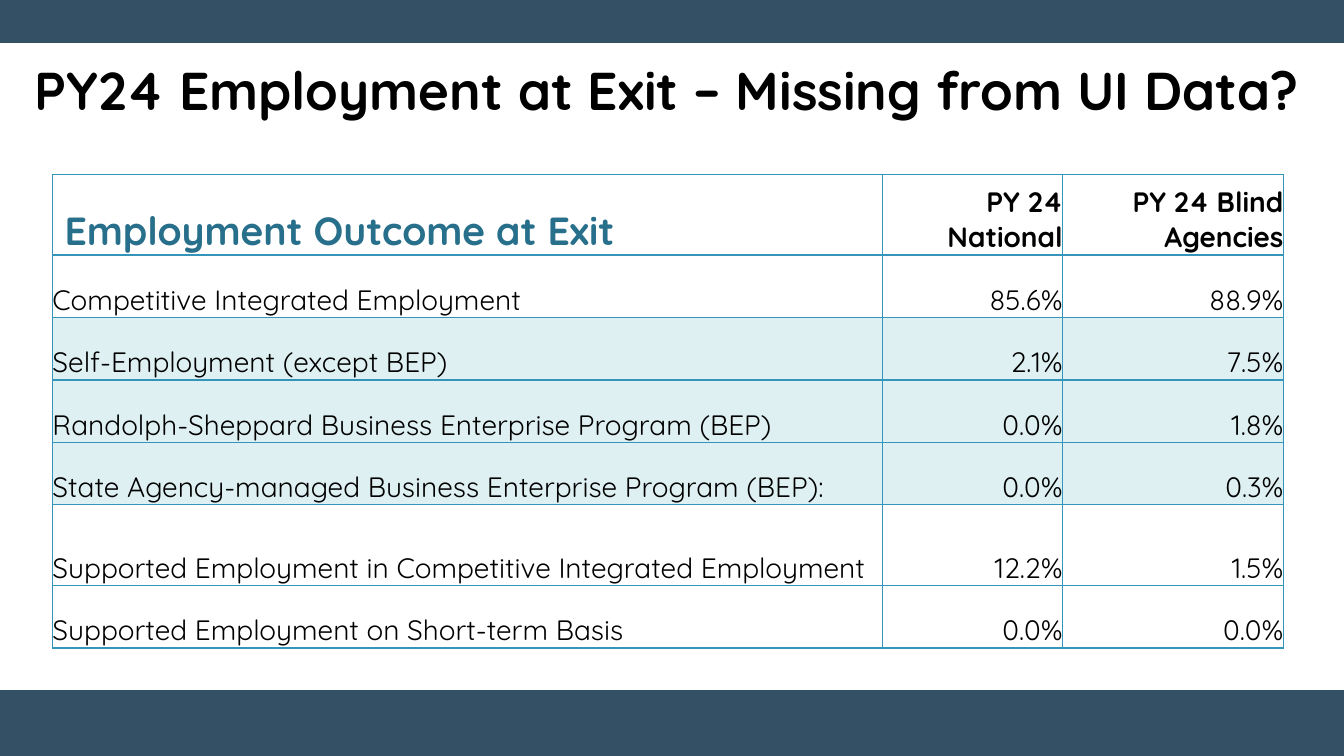
from pptx import Presentation
from pptx.dml.color import RGBColor
from pptx.enum.shapes import MSO_SHAPE as SHAPE
from pptx.enum.text import MSO_ANCHOR as ANCHOR, MSO_AUTO_SIZE as AUTO, PP_ALIGN as ALIGN
from pptx.oxml import parse_xml
from pptx.oxml.ns import nsdecls
from pptx.util import Inches, Pt

NAVY = RGBColor(0x34, 0x50, 0x65)
TEAL = RGBColor(0x27, 0x6F, 0x8B)
BORDER = RGBColor(0x34, 0x94, 0xBA)
PALE = RGBColor(0xDE, 0xF0, 0xF2)
BLACK = RGBColor(0, 0, 0)
WHITE = RGBColor(255, 255, 255)
FONT = "Quicksand"

COL_WIDTHS = [8.23, 1.79, 2.19]
ROW_HEIGHTS = [0.8, 0.62, 0.62, 0.62, 0.62, 0.8, 0.62]
SHADED_ROWS = (2, 3, 4)
ROWS = [
    ("Employment Outcome at Exit", "PY 24 National", "PY 24 Blind Agencies"),
    ("Competitive Integrated Employment", "85.6%", "88.9%"),
    ("Self-Employment (except BEP)", "2.1%", "7.5%"),
    ("Randolph-Sheppard Business Enterprise Program (BEP)", "0.0%", "1.8%"),
    ("State Agency-managed Business Enterprise Program (BEP):", "0.0%", "0.3%"),
    ("Supported Employment in Competitive Integrated Employment", "12.2%", "1.5%"),
    ("Supported Employment on Short-term Basis", "0.0%", "0.0%"),
]


def style_font(p, size, color, bold):
    for r in p.runs:
        r.font.name = FONT
        r.font.size = Pt(size)
        r.font.bold = bold
        r.font.color.rgb = color


def add_bar(s, top, height):
    sp = s.shapes.add_shape(SHAPE.RECTANGLE, 0, Inches(top), Inches(13.33), Inches(height))
    sp.shadow.inherit = False
    sp.fill.solid()
    sp.fill.fore_color.rgb = NAVY
    sp.line.color.rgb = NAVY
    sp.line.width = Pt(1)


def set_title(s, text):
    sp = s.shapes.title
    sp.left, sp.top = Inches(0.24), Inches(0.45)
    sp.width, sp.height = Inches(12.94), Inches(0.96)
    tf = sp.text_frame
    tf.text = text
    tf.word_wrap = True
    tf.auto_size = AUTO.NONE
    tf.vertical_anchor = ANCHOR.MIDDLE
    p = tf.paragraphs[0]
    p.alignment = ALIGN.LEFT
    p.line_spacing = 0.9
    style_font(p, 38, BLACK, True)


def set_borders(cell, top, bottom):
    tc_pr = cell._tc.get_or_add_tcPr()
    for side, width in (("L", 1), ("R", 1), ("T", top), ("B", bottom)):
        tc_pr.append(parse_xml(
            f'<a:ln{side} {nsdecls("a")} w="{Pt(width)}"><a:solidFill>'
            f'<a:srgbClr val="{BORDER}"/></a:solidFill></a:ln{side}>'))


def fill_cell(cell, text, row, col):
    header = row == 0
    heading = header and col == 0
    cell.text = text
    cell.vertical_anchor = ANCHOR.BOTTOM
    cell.margin_left = Inches(0.12 if heading else 0)
    cell.margin_right = cell.margin_top = cell.margin_bottom = 0
    p = cell.text_frame.paragraphs[0]
    p.alignment = ALIGN.RIGHT if col else ALIGN.LEFT
    style_font(p, 28 if heading else 20, TEAL if heading else BLACK, header)
    set_borders(cell, 2 if row == 1 else 1, 2 if header else 1)
    cell.fill.solid()
    cell.fill.fore_color.rgb = PALE if row in SHADED_ROWS else WHITE


def add_outcome_table(s):
    table = s.shapes.add_table(
        len(ROWS), len(COL_WIDTHS), Inches(0.52), Inches(1.73),
        Inches(sum(COL_WIDTHS)), Inches(sum(ROW_HEIGHTS))).table
    table.horz_banding = False
    for column, width in zip(table.columns, COL_WIDTHS):
        column.width = Inches(width)
    for row, (texts, height) in enumerate(zip(ROWS, ROW_HEIGHTS)):
        table.rows[row].height = Inches(height)
        for col, text in enumerate(texts):
            fill_cell(table.cell(row, col), text, row, col)


def main():
    prs = Presentation()
    prs.slide_width, prs.slide_height = Inches(13.33), Inches(7.5)
    s = prs.slides.add_slide(prs.slide_layouts[5])
    add_bar(s, 6.85, 0.65)
    add_bar(s, 0, 0.42)
    set_title(s, "PY24 Employment at Exit – Missing from UI Data?")
    add_outcome_table(s)
    prs.save("out.pptx")


if __name__ == "__main__":
    main()
